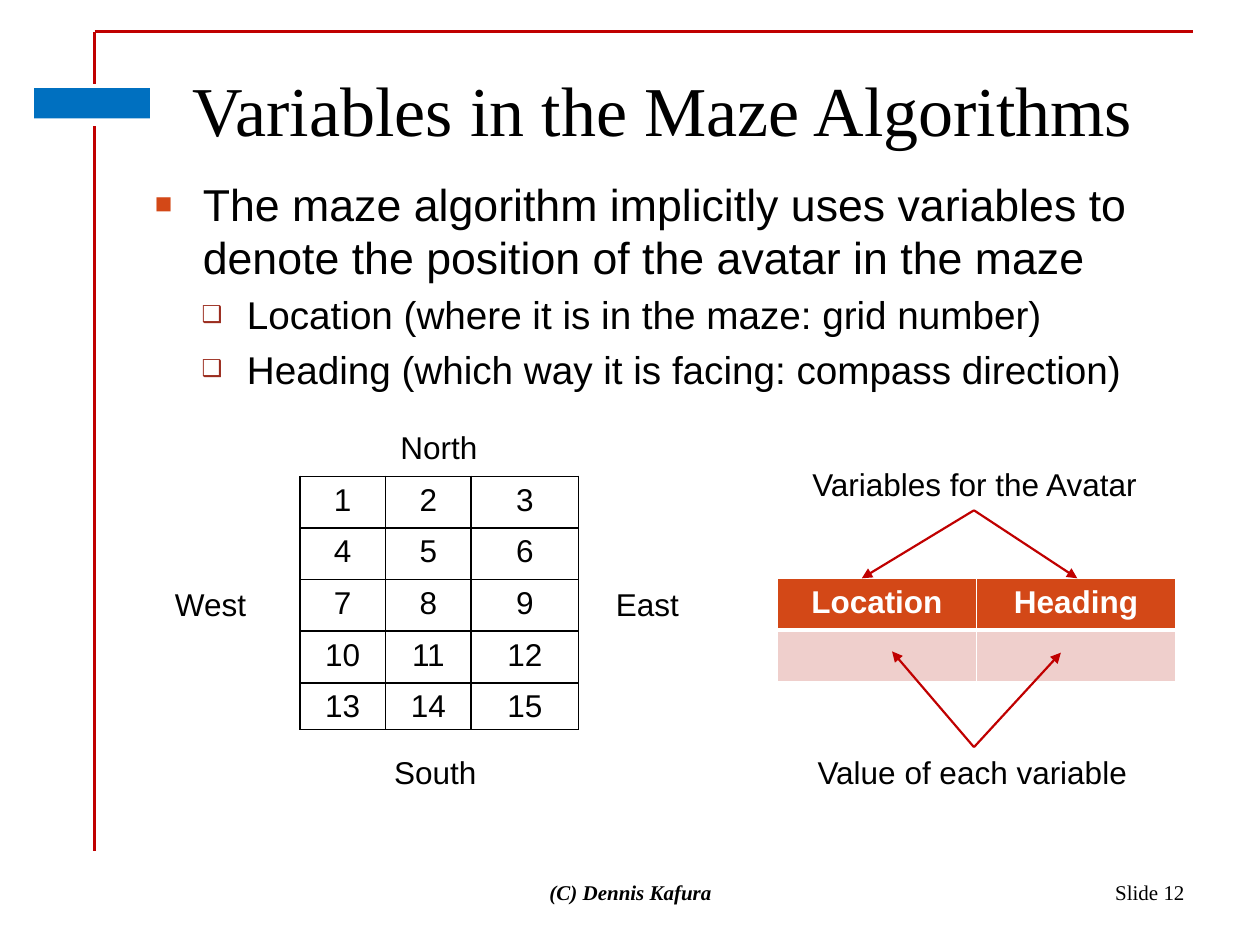
import lxml.etree
import pptx
import pptx.dml.color
import pptx.enum.shapes
import pptx.enum.text
import pptx.oxml
import pptx.oxml.ns
import pptx.util

Inches = pptx.util.Inches
Pt = pptx.util.Pt
qn = pptx.oxml.ns.qn
ALIGN = pptx.enum.text.PP_ALIGN
ANCHOR = pptx.enum.text.MSO_ANCHOR

BLACK = pptx.dml.color.RGBColor(0x00, 0x00, 0x00)
WHITE = pptx.dml.color.RGBColor(0xFF, 0xFF, 0xFF)
RED = pptx.dml.color.RGBColor(0xC0, 0x00, 0x00)
BLUE = pptx.dml.color.RGBColor(0x00, 0x70, 0xC0)
ORANGE = pptx.dml.color.RGBColor(0xD3, 0x48, 0x17)
MAROON = pptx.dml.color.RGBColor(0x9B, 0x2D, 0x1F)
PINK = pptx.dml.color.RGBColor(0xEF, 0xCF, 0xCC)

LABEL = {"name": "Arial", "size": Pt(18), "bold": False}
HEADER = {"name": "Arial", "size": Pt(18), "bold": True}
TITLE = {"name": "Times New Roman", "size": Pt(40)}
FOOTER = {"name": "Times New Roman", "size": Pt(12)}


def write(paragraph, text, formats, color=BLACK, align=ALIGN.LEFT):
    paragraph.alignment = align
    run = paragraph.add_run()
    run.text = text
    for attribute, value in formats.items():
        setattr(run.font, attribute, value)
    run.font.color.rgb = color


def draw_line(start, end, width, arrow=False):
    points = [Inches(value) for value in (*start, *end)]
    line = slide.shapes.add_connector(
        pptx.enum.shapes.MSO_CONNECTOR.STRAIGHT, *points)
    line.line.color.rgb = RED
    line.line.width = Pt(width)
    properties = line._element.spPr
    if arrow:
        outline = properties.find(qn("a:ln"))
        lxml.etree.SubElement(outline, qn("a:tailEnd"), type="triangle")
    lxml.etree.SubElement(properties, qn("a:effectLst"))


deck = pptx.Presentation()
deck.slide_width = Inches(10)
deck.slide_height = Inches(7.5)
slide = deck.slides.add_slide(deck.slide_layouts[1])

draw_line((0.75, 0.25), (9.47, 0.25), 2)
draw_line((0.75, 0.25), (0.75, 0.67), 1.75)
draw_line((0.75, 1), (0.75, 6.75), 1.75)

corner_block = slide.shapes.add_shape(
    pptx.enum.shapes.MSO_SHAPE.RECTANGLE,
    Inches(0.27), Inches(0.7), Inches(0.92), Inches(0.24))
corner_block.shadow.inherit = False
corner_block.fill.solid()
corner_block.fill.fore_color.rgb = BLUE
corner_block.line.fill.background()

title, body = slide.placeholders
for placeholder, box in (
    (title, (1.43, 0.47, 8.23, 0.78)),
    (body, (1.13, 1.35, 8.17, 1.99)),
):
    placeholder.left, placeholder.top, placeholder.width, placeholder.height = (
        Inches(value) for value in box)
    placeholder.text_frame.auto_size = pptx.enum.text.MSO_AUTO_SIZE.NONE
write(title.text_frame.paragraphs[0], "Variables in the Maze Algorithms", TITLE)

main = (0, 0.38, -0.38, "■", ORANGE, 65, 25.5)
detail = (1, 0.73, -0.36, "❑", MAROON, 60, 22.1)
points = (
    ("The maze algorithm implicitly uses variables to denote the position "
     "of the avatar in the maze", main),
    ("Location (where it is in the maze: grid number)", detail),
    ("Heading (which way it is facing: compass direction)", detail),
)
for index, (text, style) in enumerate(points):
    level, margin, indent, bullet, bullet_color, percent, size = style
    frame = body.text_frame
    paragraph = frame.add_paragraph() if index else frame.paragraphs[0]
    paragraph.level = level
    paragraph.space_before = Pt(size * 0.2 if index else 0)
    properties = paragraph._p.get_or_add_pPr()
    properties.set("marL", str(Inches(margin)))
    properties.set("indent", str(Inches(indent)))
    tint = lxml.etree.SubElement(properties, qn("a:buClr"))
    lxml.etree.SubElement(tint, qn("a:srgbClr"), val=str(bullet_color))
    lxml.etree.SubElement(properties, qn("a:buSzPct"), val=str(percent * 1000))
    lxml.etree.SubElement(properties, qn("a:buFont"), typeface="Arial")
    lxml.etree.SubElement(properties, qn("a:buChar"), char=bullet)
    write(paragraph, text, {"name": "Arial", "size": Pt(size)})

labels = (
    ("North", (3.08, 3.35, 0.82, 0.4), LABEL, ALIGN.LEFT),
    ("West", (1.29, 4.59, 0.77, 0.4), LABEL, ALIGN.LEFT),
    ("East", (4.79, 4.59, 0.71, 0.4), LABEL, ALIGN.LEFT),
    ("South", (3.03, 5.93, 0.86, 0.4), LABEL, ALIGN.LEFT),
    ("Variables for the Avatar", (6.15, 3.64, 3.17, 0.4), LABEL, ALIGN.CENTER),
    ("Value of each variable", (6.39, 5.93, 2.68, 0.4), LABEL, ALIGN.LEFT),
    ("(C) Dennis Kafura", (3.42, 6.83, 3.17, 0.5),
     {**FOOTER, "bold": True, "italic": True}, ALIGN.CENTER),
    ("Slide 12", (7.17, 6.83, 2.33, 0.5), FOOTER, ALIGN.RIGHT),
)
for text, box, formats, align in labels:
    label = slide.shapes.add_textbox(*(Inches(value) for value in box)).text_frame
    label.word_wrap = align != ALIGN.LEFT
    label.vertical_anchor = ANCHOR.MIDDLE if "Times" in formats["name"] else ANCHOR.TOP
    write(label.paragraphs[0], text, formats, align=align)

maze = [[str(row * 3 + column + 1) for column in range(3)] for row in range(5)]
avatar = [["Location", "Heading"], ["", ""]]
tables = (
    (maze, (2.38, 3.78), (0.68, 0.68, 0.85), (0.41,) * 4 + (0.37,),
     BLACK, (None,) * 5, LABEL, BLACK),
    (avatar, (6.17, 4.59), (1.58, 1.58), (0.41, 0.41),
     WHITE, (ORANGE, PINK), HEADER, WHITE),
)
for texts, corner, widths, heights, border, fills, formats, color in tables:
    box = (*corner, sum(widths), sum(heights))
    table = slide.shapes.add_table(
        len(heights), len(widths), *(Inches(value) for value in box)).table
    table.first_row = False
    table.horz_banding = False
    for column, width in zip(table.columns, widths):
        column.width = Inches(width)
    for index, (row, height) in enumerate(zip(table.rows, heights)):
        row.height = Inches(height)
        for cell, text in zip(row.cells, texts[index]):
            cell.margin_bottom = Inches(0.01)
            properties = cell._tc.get_or_add_tcPr()
            for side in ("lnL", "lnR", "lnT", "lnB"):
                under_header = texts is avatar and (index, side) in ((0, "lnB"), (1, "lnT"))
                edge = lxml.etree.SubElement(
                    properties, qn(f"a:{side}"), w=str(Pt(3 if under_header else 1)))
                solid = lxml.etree.SubElement(edge, qn("a:solidFill"))
                lxml.etree.SubElement(solid, qn("a:srgbClr"), val=str(border))
            if fills[index] is None:
                cell.fill.background()
            else:
                cell.fill.solid()
                cell.fill.fore_color.rgb = fills[index]
            if text:
                write(cell.text_frame.paragraphs[0], text, formats, color, ALIGN.CENTER)

for start, ends in (
    ((7.73, 5.93), ((7.08, 5.17), (8.42, 5.18))),
    ((7.73, 4.05), ((8.55, 4.59), (6.84, 4.59))),
):
    for end in ends:
        draw_line(start, end, 1.25, arrow=True)

deck.save("out.pptx")
